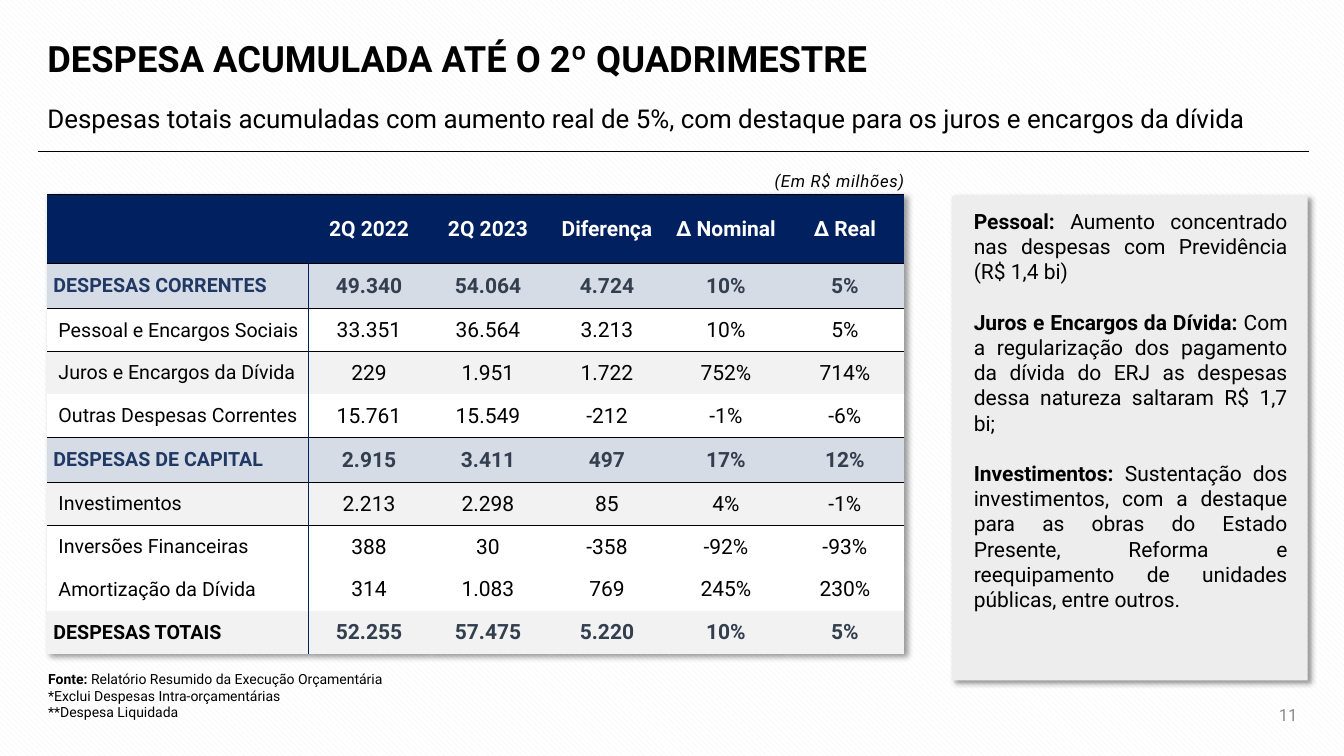
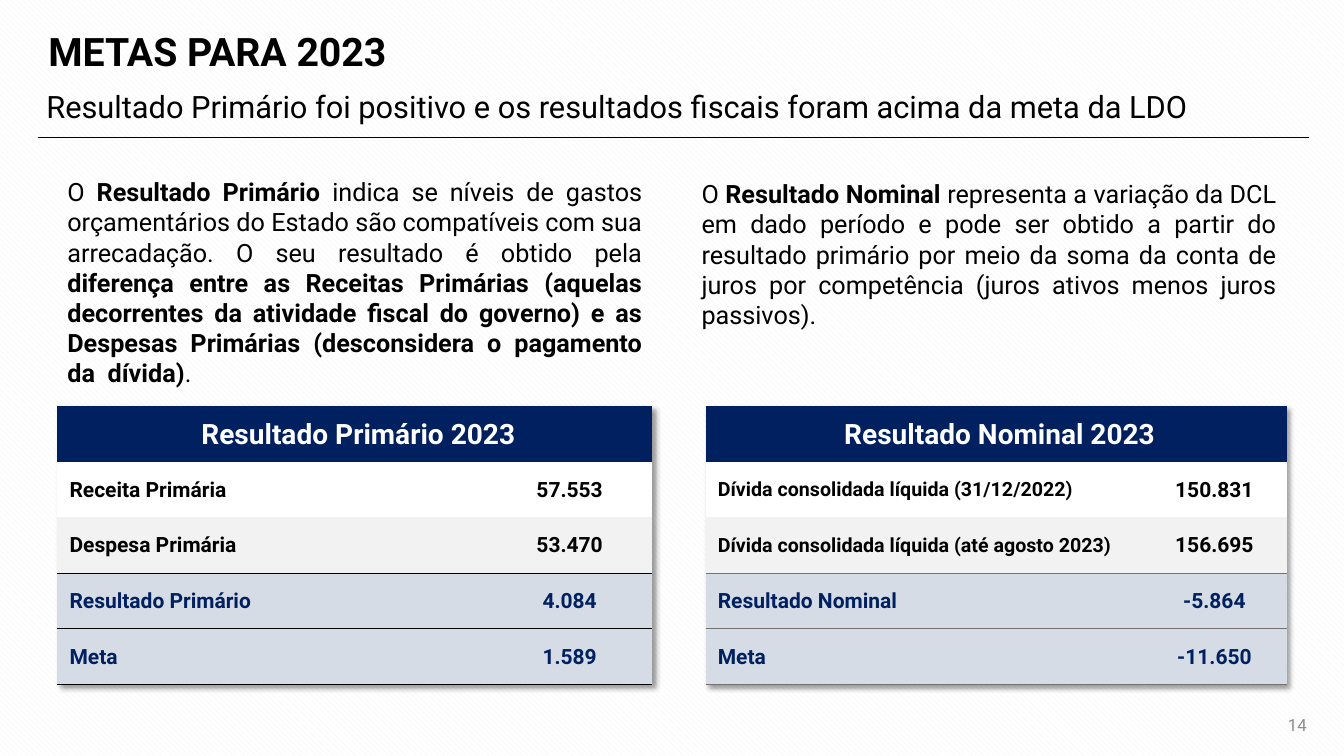
from lxml import etree
from pptx import Presentation, util as u
from pptx.dml.color import RGBColor
from pptx.enum import dml, shapes, text
from pptx.oxml.ns import qn

FONT = "Roboto"
NAVY, BLUE, SLATE = "002060", "203864", "333F4F"
PALE, GREY, WHITE, BLACK = "D6DCE5", "F2F2F2", "FFFFFF", "000000"
PLAIN_GRID = "{2D5ABB26-0587-4C30-8999-92F81FD0307C}"
LEFT, MID, RIGHT, FULL = (text.PP_ALIGN.LEFT, text.PP_ALIGN.CENTER,
                          text.PP_ALIGN.RIGHT, text.PP_ALIGN.JUSTIFY)


def tint(code):
    return RGBColor.from_string(code)


def node(parent, tag, **attrs):
    return etree.SubElement(parent, qn(tag), attrs)


def place(*at):
    return [u.Inches(n) for n in at]


class Deck:
    """Holds the shared style and the current slide."""

    def __init__(self):
        self.prs = Presentation()
        self.prs.slide_width, self.prs.slide_height = place(13.33, 7.5)
        fill = self.prs.slide_master.background.fill
        fill.patterned()
        fill.pattern = dml.MSO_PATTERN.WIDE_DOWNWARD_DIAGONAL
        fill.fore_color.rgb = tint(GREY)
        fill.back_color.rgb = tint(WHITE)

    # Slide with title, subtitle, rule and page number
    def page(self, num, num_at, title, title_at, size, lead, lead_at, lead_size, rule_y):
        self.slide = self.prs.slides.add_slide(self.prs.slide_layouts[1])
        head, body = self.slide.placeholders
        for box, at in ((head, title_at), (body, lead_at)):
            box.left, box.top, box.width, box.height = place(*at)
        self.words(head.text_frame, [title], space=0.9, middle=True, size=size, bold=True)
        self.words(body.text_frame, [lead], space=1.2, middle=True, size=lead_size)
        props = body.text_frame.paragraphs[0]._p.get_or_add_pPr()
        props.set("marL", "0")
        props.set("indent", "0")
        node(props, "a:buNone")
        self.line((0.38, rule_y), (12.98, rule_y))
        self.note(num_at, [num], align=RIGHT, middle=True, size=12, color="8C8C8C")

    # Paragraphs: a string, or a list of (words, bold) runs
    def words(self, frame, paras, align=LEFT, space=None, gap=0, middle=False, track=0, **form):
        frame.word_wrap = True
        frame.auto_size = text.MSO_AUTO_SIZE.NONE
        frame.vertical_anchor = text.MSO_ANCHOR.MIDDLE if middle else text.MSO_ANCHOR.TOP
        for i, runs in enumerate(paras):
            para = frame.add_paragraph() if i else frame.paragraphs[0]
            para.alignment = align
            para.space_before = u.Pt(gap if i else 0)
            if space:
                para.line_spacing = space
            if isinstance(runs, str):
                runs = [(runs, form.get("bold", False))]
            for part, bold in runs:
                run = para.add_run()
                run.text = part
                self.style(run.font, **{**form, "bold": bold})
                if track:
                    run._r.get_or_add_rPr().set("spc", str(track))

    def style(self, font, size, color=BLACK, **form):
        font.color.rgb = tint(color)
        for key, val in {"name": FONT, "size": u.Pt(size), **form}.items():
            setattr(font, key, val)

    def note(self, at, paras, **form):
        self.words(self.slide.shapes.add_textbox(*place(*at)).text_frame, paras, **form)

    def line(self, start, end, color=BLACK, width=0.5):
        line = self.slide.shapes.add_connector(
            shapes.MSO_CONNECTOR.STRAIGHT, *place(*start, *end))
        line.line.color.rgb = tint(color)
        line.line.width = u.Pt(width)
        node(line._element.spPr, "a:effectLst")

    def shade(self, parent):
        effect = node(parent, "a:effectLst")
        shadow = node(effect, "a:outerShdw", blurRad=str(u.Pt(4)), dist=str(u.Pt(3)),
                      dir="2700000", algn="tl", rotWithShape="0")
        node(node(shadow, "a:srgbClr", val=BLACK), "a:alpha", val="40000")
        return effect

    def panel(self, at, color):
        box = self.slide.shapes.add_shape(shapes.MSO_SHAPE.RECTANGLE, *place(*at))
        box.fill.solid()
        box.fill.fore_color.rgb = tint(color)
        box.line.fill.background()
        self.shade(box._element.spPr)

    # Table: each row is a kind followed by its texts
    def grid(self, at, cols, highs, rows, kinds, rule):
        frame = self.slide.shapes.add_table(
            len(rows), len(cols), *place(*at, sum(cols), sum(highs)))
        table = frame.table
        table.first_row = table.horz_banding = False
        props = table._tbl.tblPr
        props.find(qn("a:tableStyleId")).text = PLAIN_GRID
        props.insert(0, self.shade(props))
        for col, wide in zip(table.columns, cols):
            col.width = u.Inches(wide)
        for row, high in zip(table.rows, highs):
            row.height = u.Inches(high)
        ruled = [kinds[kind].get("ruled", False) for kind, *_ in rows]
        for r, (kind, *texts) in enumerate(rows):
            look = kinds[kind]
            above = ruled[r] or (r > 0 and ruled[r - 1])
            below = ruled[r] or (r + 1 < len(rows) and ruled[r + 1])
            if len(texts) == 1:
                table.cell(r, 0).merge(table.cell(r, len(cols) - 1))
            for c in range(len(cols)):
                cell = table.cell(r, c)
                self.edge(cell, above, below, *rule)
                cell.fill.solid()
                cell.fill.fore_color.rgb = tint(look["fill"])
                pad = look["pad"] if c == 0 else 0.01
                (cell.margin_left, cell.margin_top,
                 cell.margin_right, cell.margin_bottom) = place(pad, 0.01, 0.01, 0)
                cell.vertical_anchor = text.MSO_ANCHOR.MIDDLE
                if c < len(texts) and texts[c]:
                    self.fill(cell, texts[c], look, c == 0 and len(texts) > 1)

    def fill(self, cell, words, look, label):
        para = cell.text_frame.paragraphs[0]
        para.alignment = LEFT if label else MID
        run = para.add_run()
        run.text = words
        size, color = look["label" if label else "value"]
        self.style(run.font, size, color, bold=look["bold"])

    def edge(self, cell, above, below, color, width):
        props = cell._tc.get_or_add_tcPr()
        for tag, shown in (("a:lnT", above), ("a:lnB", below)):
            if shown:
                line = node(props, tag, w=str(u.Pt(width)))
                node(node(line, "a:solidFill"), "a:srgbClr", val=color)


def kind(fill, pad, label, value, bold=True, ruled=False):
    return dict(fill=fill, pad=pad, label=label, value=value, bold=bold, ruled=ruled)


def spending(deck):
    deck.page("11", (12.01, 6.89, 0.96, 0.4),
              "DESPESA ACUMULADA ATÉ O 2º QUADRIMESTRE", (0.37, 0.21, 8.61, 0.79), 25.9,
              "Despesas totais acumuladas com aumento real de 5%, com destaque para os juros "
              "e encargos da dívida", (0.37, 0.85, 12.6, 0.59), 18.5, 1.5)
    # Spending table
    item = (0.11, (14, BLACK), (15, BLACK), False)
    kinds = {
        "head": kind(NAVY, 0.01, (15, WHITE), (15, WHITE), ruled=True),
        "group": kind(PALE, 0.06, (14, BLUE), (15, SLATE), ruled=True),
        "white": kind(WHITE, *item),
        "grey": kind(GREY, *item),
        "total": kind(GREY, 0.06, (14, BLACK), (15, SLATE)),
    }
    rows = [
        ("head", "", "2Q 2022", "2Q 2023", "Diferença", "∆ Nominal", "∆ Real"),
        ("group", "DESPESAS CORRENTES", "49.340", "54.064", "4.724", "10%", "5%"),
        ("white", "Pessoal e Encargos Sociais", "33.351", "36.564", "3.213", "10%", "5%"),
        ("grey", "Juros e Encargos da Dívida", "229", "1.951", "1.722", "752%", "714%"),
        ("white", "Outras Despesas Correntes", "15.761", "15.549", "-212", "-1%", "-6%"),
        ("group", "DESPESAS DE CAPITAL", "2.915", "3.411", "497", "17%", "12%"),
        ("grey", "Investimentos", "2.213", "2.298", "85", "4%", "-1%"),
        ("white", "Inversões Financeiras", "388", "30", "-358", "-92%", "-93%"),
        ("white", "Amortização da Dívida", "314", "1.083", "769", "245%", "230%"),
        ("total", "DESPESAS TOTAIS", "52.255", "57.475", "5.220", "10%", "5%"),
    ]
    highs = [{"head": 0.68, "group": 0.45}.get(row[0], 0.425) for row in rows]
    deck.grid((0.47, 1.93), [2.6] + [1.18] * 5, highs, rows, kinds, (BLACK, 0.5))
    deck.line((3.06, 2.61), (3.06, 6.49), NAVY, 0.75)
    deck.note((7.21, 1.61, 1.86, 0.4), ["(Em R$ milhões)"], align=RIGHT, space=1.2,
              track=50, size=12, italic=True)
    # Side comments
    deck.panel((9.44, 1.94, 3.53, 4.81), "EDEDED")
    deck.note((9.56, 2.02, 3.31, 3.89), [
        [("Pessoal: ", True),
         ("Aumento concentrado nas despesas com Previdência (R$ 1,4 bi)", False)],
        [("Juros e Encargos da Dívida: ", True),
         ("Com a regularização dos pagamento da dívida do ERJ as despesas dessa natureza "
          "saltaram R$ 1,7 bi;", False)],
        [("Investimentos: ", True),
         ("Sustentação dos investimentos, com a destaque para as obras do Estado Presente, "
          "Reforma e reequipamento de unidades públicas, entre outros.", False)],
    ], align=FULL, gap=18, size=15)
    # Source notes
    deck.note((0.38, 6.6, 4.74, 0.61), [
        [("Fonte: ", True), ("Relatório Resumido da Execução Orçamentária", False)],
        "*Exclui Despesas Intra-orçamentárias",
        "**Despesa Liquidada",
    ], size=10)


def targets(deck):
    deck.page("14", (12.1, 6.99, 0.96, 0.4),
              "METAS PARA 2023", (0.38, 0.14, 7.85, 0.79), 28,
              "Resultado Primário foi positivo e os resultados fiscais foram acima da meta "
              "da LDO", (0.36, 0.72, 12.6, 0.59), 22, 1.36)
    # Definitions
    deck.note((0.57, 1.7, 5.9, 2.22), [[
        ("O ", False), ("Resultado Primário ", True),
        ("indica se níveis de gastos orçamentários do Estado são compatíveis com sua "
         "arrecadação. O seu resultado é obtido pela ", False),
        ("diferença entre as Receitas Primárias (aquelas decorrentes da atividade fiscal do "
         "governo) e as Despesas Primárias (desconsidera o pagamento da  dívida)", True),
        (".", False)]], align=FULL, size=18)
    deck.note((6.86, 1.72, 5.9, 1.62), [[
        ("O ", False), ("Resultado Nominal ", True),
        ("representa a variação da DCL em dado período e pode ser obtido a partir do "
         "resultado primário por meio da soma da conta de juros por competência (juros "
         "ativos menos juros passivos).", False)]], align=FULL, size=18)
    # Result tables
    tables = [
        (0.57, [4.26, 1.64], 15, (BLACK, 0.5), [
            ("head", "Resultado Primário 2023"),
            ("white", "Receita Primária", "57.553"),
            ("grey", "Despesa Primária", "53.470"),
            ("sum", "Resultado Primário", "4.084"),
            ("sum", "Meta", "1.589")]),
        (7, [4.33, 1.43], 14, ("767171", 1), [
            ("head", "Resultado Nominal 2023"),
            ("white", "Dívida consolidada líquida (31/12/2022)", "150.831"),
            ("grey", "Dívida consolidada líquida (até agosto 2023)", "156.695"),
            ("sum", "Resultado Nominal", "-5.864"),
            ("sum", "Meta", "-11.650")]),
    ]
    for left, cols, size, rule, rows in tables:
        item = (0.12, (size, BLACK), (15, BLACK))
        kinds = {
            "head": kind(NAVY, 0.08, (20, WHITE), (20, WHITE)),
            "white": kind(WHITE, *item),
            "grey": kind(GREY, *item),
            "sum": kind(PALE, 0.12, (15, NAVY), (15, NAVY), ruled=True),
        }
        deck.grid((left, 4.03), cols, [2.76 / 5] * 5, rows, kinds, rule)


def main():
    deck = Deck()
    spending(deck)
    targets(deck)
    deck.prs.save("out.pptx")


if __name__ == "__main__":
    main()
